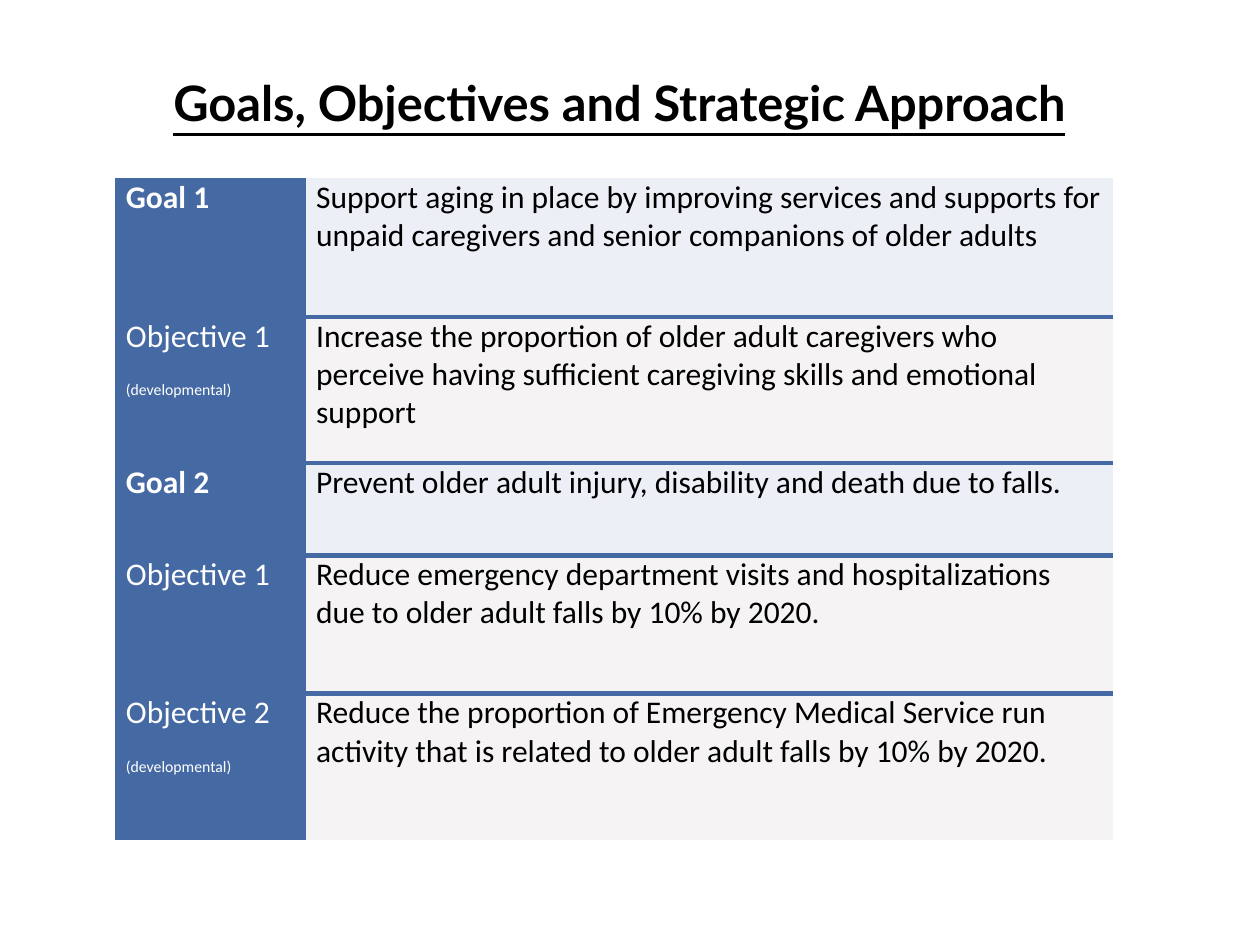
from dataclasses import dataclass

from lxml.etree import SubElement
from pptx import Presentation
from pptx.dml.color import RGBColor
from pptx.enum.text import MSO_ANCHOR, PP_ALIGN
from pptx.oxml.ns import qn
from pptx.util import Pt

HUES = {"blue": "4569A3", "pale": "ECF0F6", "grey": "F5F3F3",
        "white": "FFFFFF", "black": "000000"}
COLS = (108.7, 461.5)
LEFT, TOP = 66, 102


@dataclass
class Row:
    label: str
    text: str
    high: float
    goal: bool = False
    note: str = ""


ROWS = [
    Row("Goal 1", "Support aging in place by improving services and supports "
        "for unpaid caregivers and senior companions of older adults", 79.2, goal=True),
    Row("Objective 1", "Increase the proportion of older adult caregivers who "
        "perceive having sufficient caregiving skills and emotional support",
        83.5, note="(developmental)"),
    Row("Goal 2", "Prevent older adult injury, disability and death due to falls.",
        52.6, goal=True),
    Row("Objective 1", "Reduce emergency department visits and hospitalizations "
        "due to older adult falls by 10% by 2020.", 79.2),
    Row("Objective 2", "Reduce the proportion of Emergency Medical Service run "
        "activity that is related to older adult falls by 10% by 2020.",
        83.5, note="(developmental)"),
]


def style(item, **form) -> None:
    for name, value in form.items():
        setattr(item, name, value)


def write(para, text: str, hue: str, **form) -> None:
    run = para.add_run()
    run.text = text
    style(run.font, **form)
    run.font.color.rgb = RGBColor.from_string(HUES[hue])


def edge(cell, side: str, hue: str = "") -> None:
    """Draw one cell border, or clear it when no hue is given."""
    line = SubElement(cell._tc.get_or_add_tcPr(), qn(f"a:ln{side}"), w=str(Pt(3)))
    if hue:
        fill = SubElement(line, qn("a:solidFill"))
        SubElement(fill, qn("a:srgbClr"), val=HUES[hue])
    else:
        SubElement(line, qn("a:noFill"))


def paint(cell, lines: list, fill: str, hue: str, bold: bool,
          first: bool, last: bool) -> None:
    style(cell, margin_left=Pt(6), margin_right=Pt(6), margin_top=0, margin_bottom=0)
    # Borders come before the fill in the cell properties
    for side, bare in (("L", True), ("R", True), ("T", first), ("B", last)):
        edge(cell, side, "" if bare else "blue")
    cell.fill.solid()
    cell.fill.fore_color.rgb = RGBColor.from_string(HUES[fill])
    frame = cell.text_frame
    for num, (text, size) in enumerate(lines):
        para = frame.add_paragraph() if num else frame.paragraphs[0]
        para.space_after = Pt(14.4)
        write(para, text, hue, name="Calibri", size=Pt(size), bold=bold)


def head(slide) -> None:
    title = slide.shapes.title
    style(title, left=Pt(30), top=Pt(38), width=Pt(648), height=Pt(41))
    frame = title.text_frame
    style(frame, margin_top=0, margin_bottom=0, word_wrap=True,
          vertical_anchor=MSO_ANCHOR.MIDDLE)
    para = frame.paragraphs[0]
    para.alignment = PP_ALIGN.CENTER
    write(para, "Goals, Objectives and Strategic Approach", "black",
          name="Lato", size=Pt(27.9), bold=True, underline=True)


def grid(slide) -> None:
    high = sum(row.high for row in ROWS)
    table = slide.shapes.add_table(len(ROWS), len(COLS), Pt(LEFT), Pt(TOP),
                                   Pt(sum(COLS)), Pt(high)).table
    style(table, first_row=False, horz_banding=False)
    for col, wide in zip(table.columns, COLS):
        col.width = Pt(wide)
    for num, row in enumerate(ROWS):
        table.rows[num].height = Pt(row.high)
        ends = num == 0, num == len(ROWS) - 1
        label = [(row.label, 18)] + ([(row.note, 9)] if row.note else [])
        paint(table.cell(num, 0), label, "blue", "white", row.goal, *ends)
        paint(table.cell(num, 1), [(row.text, 18)],
              "pale" if row.goal else "grey", "black", False, *ends)


def main() -> None:
    deck = Presentation()
    style(deck, slide_width=Pt(720), slide_height=Pt(540))
    slide = deck.slides.add_slide(deck.slide_layouts[5])
    head(slide)
    grid(slide)
    deck.save("out.pptx")


if __name__ == "__main__":
    main()
